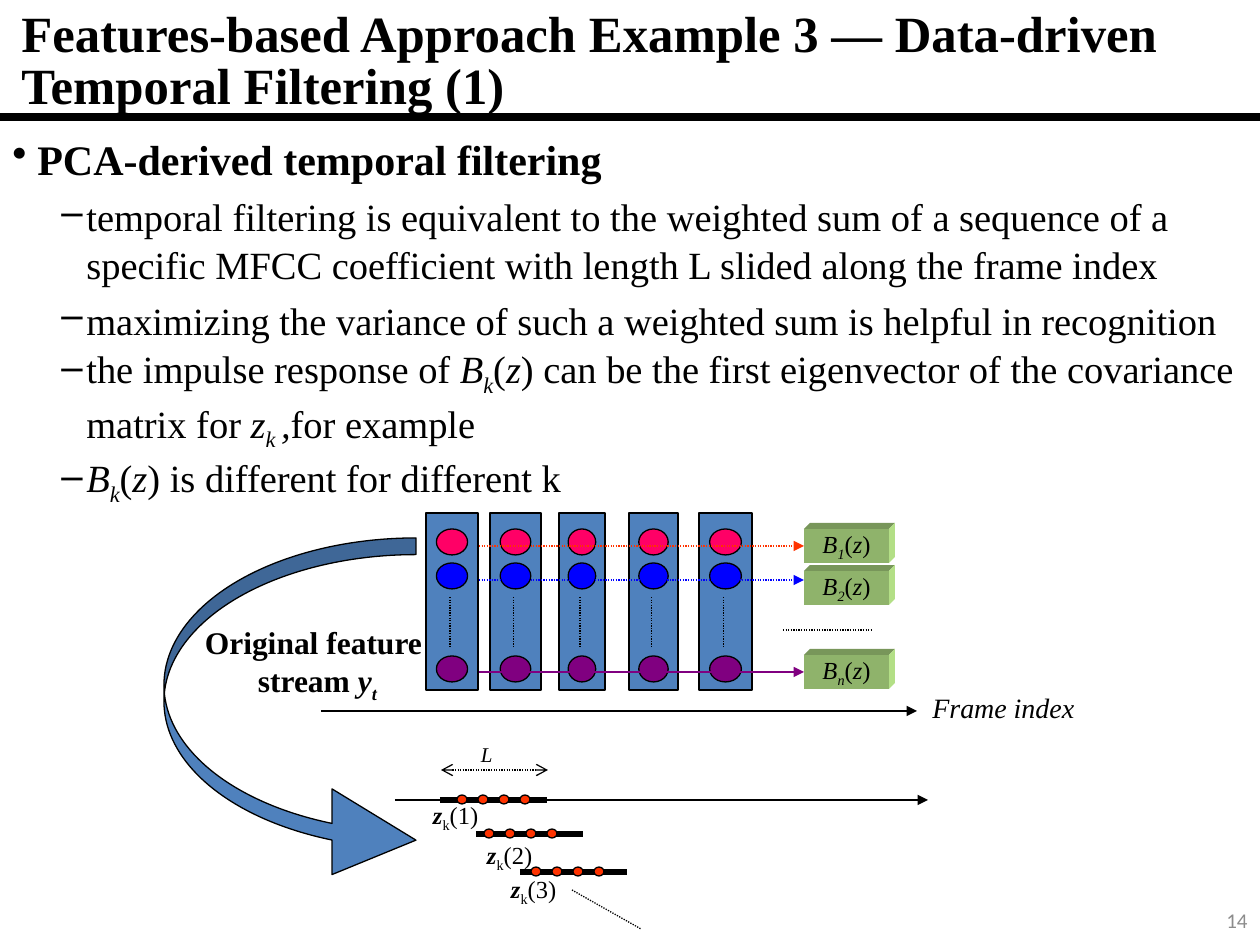
from lxml import etree
from pptx import Presentation
from pptx.dml.color import RGBColor
from pptx.enum.dml import MSO_LINE
from pptx.enum.shapes import MSO_CONNECTOR, MSO_SHAPE
from pptx.enum.text import MSO_ANCHOR, PP_ALIGN
from pptx.oxml.ns import qn
from pptx.util import Pt

PX = 914400 / 126
RECT, OVAL = MSO_SHAPE.RECTANGLE, MSO_SHAPE.OVAL
NODE, CURVE = MSO_SHAPE.FLOWCHART_CONNECTOR, MSO_SHAPE.CURVED_RIGHT_ARROW
STRAIGHT, DOT = MSO_CONNECTOR.STRAIGHT, MSO_LINE.ROUND_DOT
TOP, MID = MSO_ANCHOR.TOP, MSO_ANCHOR.MIDDLE
LEFT, MIDDLE, RIGHT = PP_ALIGN.LEFT, PP_ALIGN.CENTER, PP_ALIGN.RIGHT
SERIF, SANS = "Times New Roman", "Calibri"

BLACK = RGBColor(0x00, 0x00, 0x00)
GRAY = RGBColor(0x8C, 0x8C, 0x8C)
STEEL = RGBColor(0x4F, 0x81, 0xBD)
PINK = RGBColor(0xFF, 0x00, 0x66)
BLUE = RGBColor(0x00, 0x00, 0xFF)
PURPLE = RGBColor(0x80, 0x00, 0x80)
RED = RGBColor(0xFF, 0x33, 0x00)
GREEN = RGBColor(0x8F, 0xB3, 0x6B)
DARK = RGBColor(0x78, 0x96, 0x5A)
LIGHT = RGBColor(0xB3, 0xDF, 0x86)


def px(n):
    return round(n * PX)


def write(para, runs, size, color=BLACK, font=SERIF):
    """Fill a paragraph; flags: b bold, i italic, s subscript, n new line after."""
    para.font.size, para.font.name = Pt(size), font
    para.font.color.rgb = color
    for text, flags in runs:
        run = para.add_run()
        run.text = text
        run.font.bold, run.font.italic = "b" in flags, "i" in flags
        if "s" in flags:
            run.font._element.set("baseline", "-25000")
        if "n" in flags:
            para.add_line_break()


def label(slide, box, runs, size, align=LEFT, wrap=True, inset=True,
          anchor=TOP, color=BLACK, font=SERIF):
    frame = slide.shapes.add_textbox(*map(px, box)).text_frame
    frame.word_wrap, frame.vertical_anchor = wrap, anchor
    if not inset:
        frame.margin_left = frame.margin_right = 0
        frame.margin_top = frame.margin_bottom = 0
    para = frame.paragraphs[0]
    para.alignment = align
    write(para, runs, size, color, font)
    return para


def paint(item, fill, edge=True):
    item.shadow.inherit = False
    item.fill.solid()
    item.fill.fore_color.rgb = fill
    if edge:
        item.line.color.rgb, item.line.width = BLACK, Pt(0.75)
    else:
        item.line.fill.background()
    return item


def shape(slide, kind, box, fill, edge=True):
    return paint(slide.shapes.add_shape(kind, *map(px, box)), fill, edge)


def line(slide, x1, y1, x2, y2, color=BLACK, width=0.75, dash=None,
         head=None, tail=None):
    link = slide.shapes.add_connector(STRAIGHT, *map(px, (x1, y1, x2, y2)))
    link.line.color.rgb, link.line.width = color, Pt(width)
    if dash:
        link.line.dash_style = dash
    stroke = link.line._get_or_add_ln()
    for tag, kind in (("a:headEnd", head), ("a:tailEnd", tail)):
        if kind:
            etree.SubElement(stroke, qn(tag), type=kind)
    etree.SubElement(link._element.spPr, qn("a:effectLst"))
    return link


def face(slide, points, fill):
    pen = slide.shapes.build_freeform(*points[0], scale=PX)
    pen.add_line_segments(points[1:])
    paint(pen.convert_to_shape(), fill, edge=False)


def block(slide, x, y, w, h, sub):
    """Raised filter box; the given box is its front."""
    d = 6
    face(slide, [(x, y), (x + d, y - d), (x + w + d, y - d), (x + w, y)], DARK)
    face(slide, [(x + w, y), (x + w + d, y - d), (x + w + d, y + h - d),
                 (x + w, y + h)], LIGHT)
    front = shape(slide, RECT, (x, y, w, h), GREEN, edge=False)
    frame = front.text_frame
    frame.word_wrap, frame.vertical_anchor = False, MID
    para = frame.paragraphs[0]
    para.alignment = MIDDLE
    write(para, [("B", "i"), (sub, "is"), ("(", ""), ("z", "i"), (")", "")], 14)
    return front


def title(slide, x, y, w, h):
    para = label(slide, (x, y, w, h), [
        ("Features-based Approach Example 3 ― Data-driven Temporal Filtering (1)", "b")], 29)
    para.line_spacing = 0.85
    line(slide, 0, y + 112, 1260, y + 112, width=4.5)


def body(slide, x, y, w, h):
    filt = [("B", "i"), ("k", "is"), ("(", ""), ("z", "i")]
    items = [
        ("•", 25, 24, 4.8, [("PCA-derived temporal filtering", "b")]),
        ("–", 74, 22, 4.4, [("temporal filtering is equivalent to the weighted sum of a sequence of "
                             "a specific MFCC coefficient with length L slided along the frame index", "")]),
        ("–", 74, 22, 4.4, [("maximizing the variance of such a weighted sum is helpful in recognition", "")]),
        ("–", 74, 22, 0, [("the impulse response of ", ""), *filt,
                          (") can be the first eigenvector of the covariance matrix for ", ""),
                          ("z", "i"), ("k ", "is"), (",", "i"), ("for example", "")]),
        ("–", 74, 22, 0, [*filt, (") is different for different k", "")]),
    ]
    frame = slide.shapes.add_textbox(*map(px, (x, y, w, h))).text_frame
    frame.word_wrap = True
    for n, (mark, left, size, gap, runs) in enumerate(items):
        para = frame.add_paragraph() if n else frame.paragraphs[0]
        para.level = min(n, 1)
        para.line_spacing, para.space_before = 1.04, Pt(gap)
        props = para._p.get_or_add_pPr()
        props.set("marL", str(px(left)))
        props.set("indent", str(-px(25)))
        etree.SubElement(props, qn("a:buChar"), char=mark)
        write(para, runs, size)


def column(slide, x, y, w, h):
    """One feature vector: three nodes and a dotted gap."""
    shape(slide, RECT, (x, y, w, h), STEEL)
    for top, fill in ((16, PINK), (50, BLUE), (143, PURPLE)):
        shape(slide, NODE, (x + w * 0.2, y + top, w * 0.6, 26), fill)
    mid = x + w / 2 - 2
    line(slide, mid, y + 84, mid, y + 135, dash=DOT)


def stream(slide, x, y):
    """Feature vectors, their filters and the frame axis."""
    for left, w in ((0, 52), (64, 51), (133, 46), (203, 49), (273, 53)):
        column(slide, x + left, y, w, 177)
    rows = (("1", 16, 33, RED, DOT), ("2", 58, 67, BLUE, DOT), ("n", 142, 159, PURPLE, None))
    for sub, top, mid, color, dash in rows:
        link = line(slide, x + 53, y + mid, x + 378, y + mid, color,
                    dash=dash, tail="triangle")
        front = block(slide, x + 378, y + top, 85, 34, sub)
        if mid == top + 17:
            link.end_connect(front, 1)
    line(slide, x + 357, y + 117, x + 446, y + 117, dash=DOT)
    line(slide, x - 105, y + 198, x + 491, y + 198, tail="triangle")
    label(slide, (x + 494, y + 171, 168, 47), [("Frame index", "i")], 16, wrap=False)


def window(slide, x, y, num, dot, text):
    """One sliding window; dot and text are offsets from its left end."""
    line(slide, x, y, x + 107, y, width=3)
    for n in range(4):
        shape(slide, OVAL, (x + dot + 21 * n, y - 5, 10, 9), RED)
    label(slide, (x + text[0], y + text[1], 77, 35),
          [("z", "bi"), ("k", "s"), (f"({num})", "")], 14, inset=False)


def slides(slide, x, y):
    """Window length, time axis and shifted windows."""
    line(slide, x, y, x + 533, y, tail="triangle")
    line(slide, x + 46, y - 30, x + 153, y - 30, dash=DOT, head="arrow", tail="arrow")
    label(slide, (x + 86, y - 59, 60, 43), [("L", "i")], 12, inset=False)
    spots = ((45, 0, 17, (-7, 0)), (81, 34, 8, (11, 6)), (125, 72, 11, (-9, 2)))
    for num, (left, top, dot, text) in enumerate(spots, 1):
        window(slide, x + left, y + top, num, dot, text)
    line(slide, x + 177, y + 90, x + 246, y + 129, dash=DOT)


def loop(slide, x, y, w, h):
    arrow = shape(slide, CURVE, (x, y, w, h), STEEL)
    for n, value in enumerate((0.066, 0.34, 0.333)):
        arrow.adjustments[n] = value
    label(slide, (x + 28, y + 79, 251, 88),
          [("Original feature ", "bn"), ("stream ", "b"), ("y", "bi"), ("t", "bis")],
          18, MIDDLE, wrap=False)


def main():
    deck = Presentation()
    deck.slide_width, deck.slide_height = px(1260), px(945)
    slide = deck.slides.add_slide(deck.slide_layouts[6])
    title(slide, 9, 5, 1251, 96)
    body(slide, 0, 125, 1260, 365)
    stream(slide, 426, 513)
    slides(slide, 395, 800)
    loop(slide, 164, 538, 252, 345)
    label(slide, (977, 895, 283, 50), [("14", "")], 12, RIGHT, anchor=MID,
          color=GRAY, font=SANS)
    deck.save("out.pptx")


if __name__ == "__main__":
    main()
